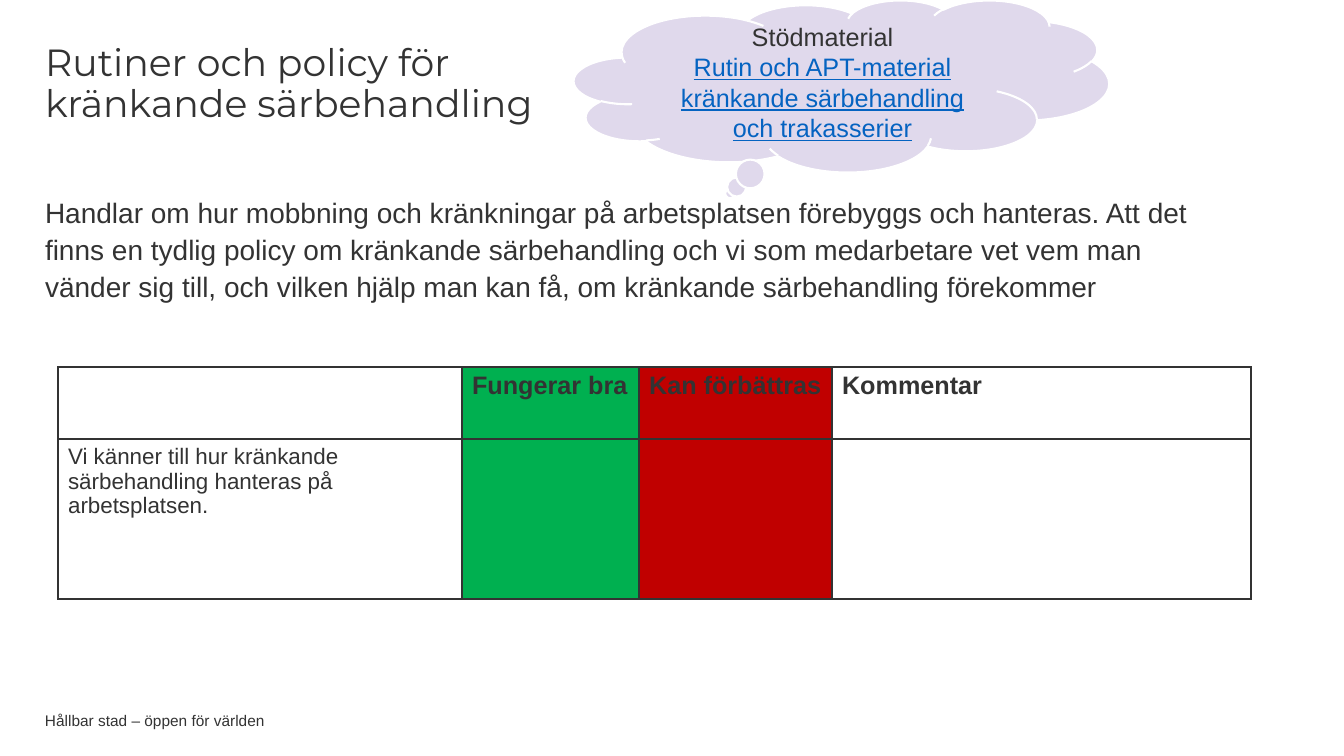
from lxml import etree
from pptx import Presentation
from pptx.dml.color import RGBColor
from pptx.enum.shapes import MSO_SHAPE as SHAPE
from pptx.enum.text import MSO_ANCHOR as ANCHOR, MSO_AUTO_SIZE as AUTO, PP_ALIGN as ALIGN
from pptx.oxml.ns import qn
from pptx.util import Pt

PX = 914400 / 100.8
COLORS = {"text": "333333", "good": "00B050", "improve": "C00000",
          "cloud": "E0D9EC", "outline": "FFFFFF", "link": "0563C1"}
COLUMNS = [("", 404, None), ("Fungerar bra", 177, "good"),
           ("Kan förbättras", 193, "improve"), ("Kommentar", 419, None)]
ROW_HEIGHTS = [72, 160]
STATEMENT = "Vi känner till hur kränkande särbehandling hanteras på arbetsplatsen."


def px(*lengths):
    return [round(n * PX) for n in lengths]


def rgb(name):
    return RGBColor.from_string(COLORS[name])


def style(font, size, name="Arial", color="text", bold=False):
    font.size, font.name, font.bold = Pt(size), name, bold
    font.color.rgb = rgb(color)


def setup_frame(tf, anchor, inset=0):
    tf.word_wrap = True
    tf.auto_size = AUTO.NONE
    tf.vertical_anchor = anchor
    tf.margin_left = tf.margin_right = 0
    tf.margin_top = tf.margin_bottom = px(inset)[0]


def add_title(slide, box):
    title = slide.shapes.title
    title.left, title.top, title.width, title.height = px(*box)
    setup_frame(title.text_frame, ANCHOR.MIDDLE, 5)
    p = title.text_frame.paragraphs[0]
    p.text = "Rutiner och policy för\vkränkande särbehandling"
    p.alignment = ALIGN.LEFT
    p.line_spacing = 0.9
    style(p.font, 27, "Montserrat")


def add_text(slide, box, text, size, anchor=ANCHOR.TOP, spacing=1.0):
    tf = slide.shapes.add_textbox(*px(*box)).text_frame
    setup_frame(tf, anchor)
    p = tf.paragraphs[0]
    p.text = text
    p.line_spacing = spacing
    style(p.font, size)


def add_cloud(slide, box):
    sp = slide.shapes.add_shape(SHAPE.CLOUD_CALLOUT, *px(*box))
    sp.shadow.inherit = False
    sp.fill.solid()
    sp.fill.fore_color.rgb = rgb("cloud")
    sp.line.color.rgb = rgb("outline")
    sp.line.width = Pt(1.5)
    tf = sp.text_frame
    tf.word_wrap = True
    tf.vertical_anchor = ANCHOR.MIDDLE
    p = tf.paragraphs[0]
    p.alignment = ALIGN.CENTER
    r = p.add_run()
    r.text = "Stödmaterial"
    style(r.font, 18)
    p.add_line_break()
    r = p.add_run()
    r.text = "Rutin och APT-material kränkande särbehandling och trakasserier"
    style(r.font, 18, color="link")
    r.font.underline = True


def add_borders(cell):
    """Draw all four edges; they must come before the fill in the cell."""
    tc_pr = cell._tc.get_or_add_tcPr()
    for i, side in enumerate(("lnL", "lnR", "lnT", "lnB")):
        ln = etree.Element(qn(f"a:{side}"), w=str(Pt(1)))
        fill = etree.SubElement(ln, qn("a:solidFill"))
        etree.SubElement(fill, qn("a:srgbClr"), val=COLORS["text"])
        tc_pr.insert(i, ln)


def add_assessment(slide, left, top):
    widths = [width for _, width, _ in COLUMNS]
    table = slide.shapes.add_table(
        len(ROW_HEIGHTS), len(COLUMNS),
        *px(left, top, sum(widths), sum(ROW_HEIGHTS))).table
    for row, height in zip(table.rows, px(*ROW_HEIGHTS)):
        row.height = height
    for c, (heading, width, fill) in enumerate(COLUMNS):
        table.columns[c].width = px(width)[0]
        for r, text in enumerate((heading, "" if c else STATEMENT)):
            cell = table.cell(r, c)
            if fill:
                cell.fill.solid()
                cell.fill.fore_color.rgb = rgb(fill)
            else:
                cell.fill.background()
            add_borders(cell)
            p = cell.text_frame.paragraphs[0]
            p.text = text
            style(p.font, 16 if r else 18, bold=r == 0)


def build_slide(prs):
    slide = prs.slides.add_slide(prs.slide_layouts[5])
    add_text(slide, (45, 712, 953, 16), "Hållbar stad – öppen för världen", 11, ANCHOR.MIDDLE)
    add_title(slide, (45, 44, 1011, 82))
    add_text(slide, (45, 192, 1172, 461),
             "Handlar om hur mobbning och kränkningar på arbetsplatsen förebyggs och hanteras. "
             "Att det finns en tydlig policy om kränkande särbehandling och vi som medarbetare "
             "vet vem man vänder sig till, och vilken hjälp man kan få, om kränkande "
             "särbehandling förekommer", 20, spacing=1.1)
    add_assessment(slide, 58, 367)
    add_cloud(slide, (574, 0, 535, 172))


def main():
    prs = Presentation()
    prs.slide_width, prs.slide_height = px(1344, 756)
    build_slide(prs)
    prs.save("out.pptx")


if __name__ == "__main__":
    main()
